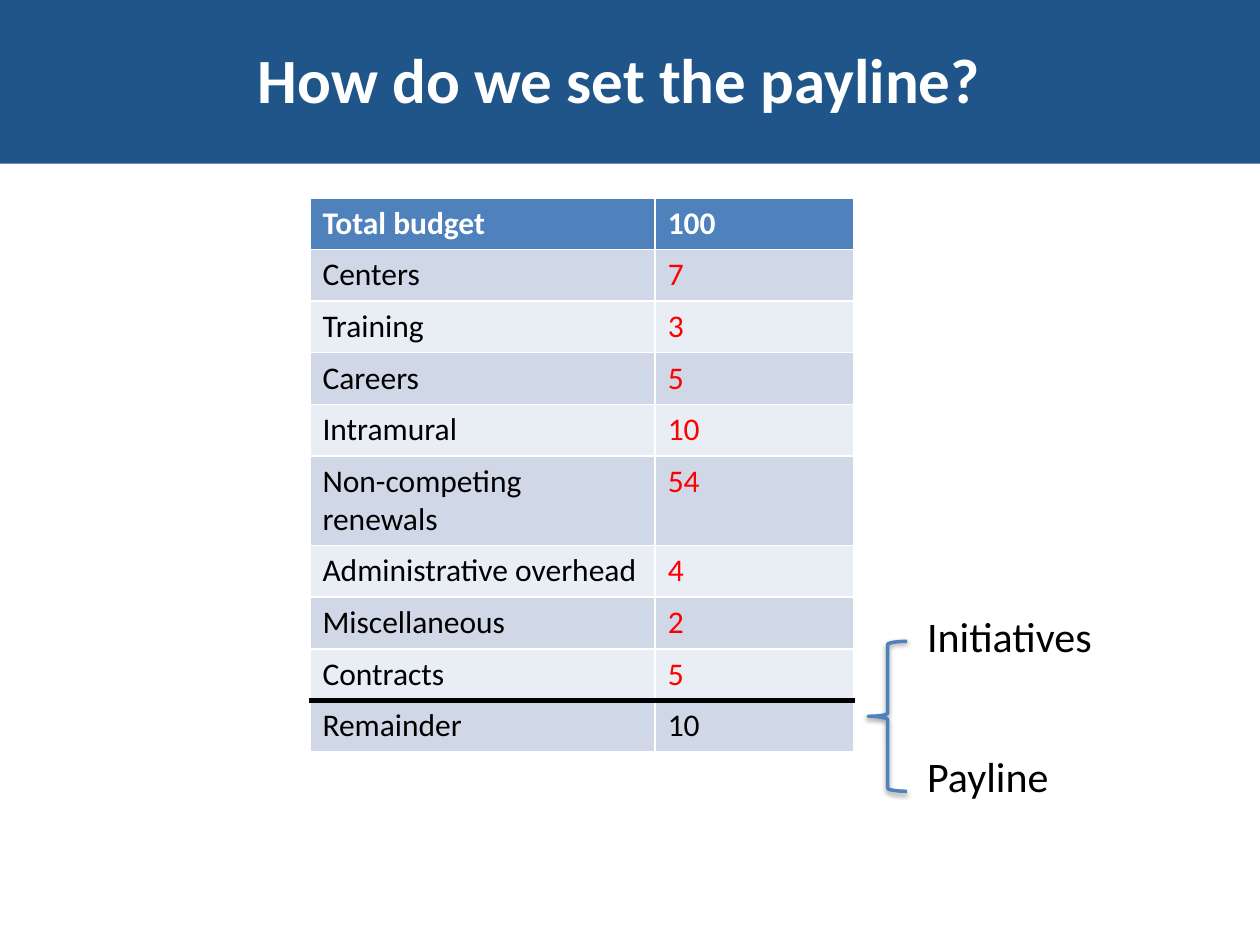
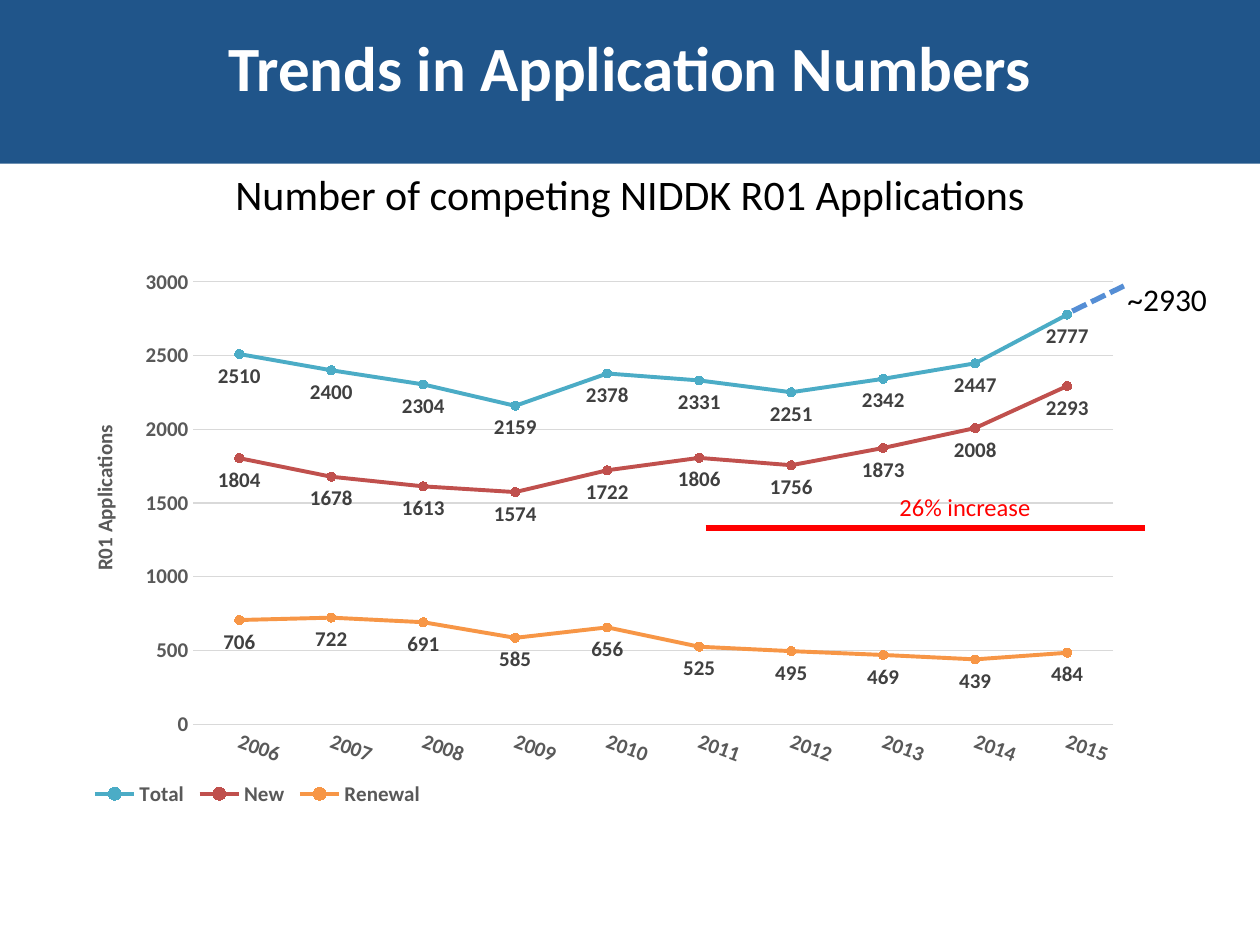
from lxml import etree
from pptx import Presentation
from pptx import util as u
from pptx.chart.data import CategoryChartData
from pptx.dml.color import RGBColor
from pptx.enum import chart as charts, dml, shapes, text
from pptx.oxml import parse_xml
from pptx.oxml.ns import nsdecls, qn

FONT = "Calibri"
COLORS = {
    "band": "20558A", "white": "FFFFFF", "black": "000000", "red": "FF0000",
    "blue": "4F81BD", "odd_row": "D0D8E8", "even_row": "E9EDF4",
    "projection": "558ED5", "total": "4BACC6", "new": "C0504D",
    "renewal": "F79646", "axis": "595959", "label": "404040", "grid": "D9D9D9",
}
RGB = {name: RGBColor.from_string(value) for name, value in COLORS.items()}


def style_font(font, size, color, bold=False):
    font.name = FONT
    font.size = u.Pt(size)
    font.bold = bold
    font.color.rgb = RGB[color]


def add_line(slide, start, end, color):
    points = [u.Inches(value) for value in start + end]
    line = slide.shapes.add_connector(shapes.MSO_CONNECTOR.STRAIGHT, *points)
    line.line.color.rgb = RGB[color]
    line.line.width = u.Pt(3)
    etree.SubElement(line.element.spPr, qn("a:effectLst"))
    return line


presentation = Presentation()
presentation.slide_width = u.Inches(10)
presentation.slide_height = u.Inches(7.5)
layout = presentation.slide_layouts[5]

slides = []
for title_text, left, top in [
    ("How do we set the payline? ", 0.47, 0),
    ("Trends in Application Numbers", 0.5, -0.1),
]:
    slide = presentation.slides.add_slide(layout)
    title = slide.shapes.title
    title.left, title.top = u.Inches(left), u.Inches(top)
    title.width, title.height = u.Inches(9), u.Inches(1.25)
    title.text_frame.text = title_text
    title.text_frame.vertical_anchor = text.MSO_ANCHOR.MIDDLE
    paragraph = title.text_frame.paragraphs[0]
    paragraph.alignment = text.PP_ALIGN.CENTER
    style_font(paragraph.font, 36, "white", True)
    slides.append(slide)
payline_slide, trends_slide = slides

band = payline_slide.shapes.add_shape(
    shapes.MSO_SHAPE.RECTANGLE, 0, 0, u.Inches(10), u.Inches(1.3))
band.fill.solid()
band.fill.fore_color.rgb = RGB["band"]
band.line.fill.background()
band.shadow.inherit = False
layout.shapes.element.insert(2, band.element)

budget = [
    ("Total budget", "100"), ("Centers", "7"), ("Training", "3"),
    ("Careers", "5"), ("Intramural", "10"), ("Non-competing renewals", "54"),
    ("Administrative overhead", "4"), ("Miscellaneous", "2"),
    ("Contracts", "5"), ("Remainder", "10"),
]
last_row = len(budget) - 1
table = payline_slide.shapes.add_table(
    len(budget), 2, u.Inches(2.46), u.Inches(1.57),
    u.Inches(4.32), u.Inches(0.41 * len(budget))).table
table.columns[0].width = u.Inches(2.74)
table.columns[1].width = u.Inches(1.58)
rule_edges = {last_row - 1: "lnB", last_row: "lnT"}
for row, values in enumerate(budget):
    for column, value in enumerate(values):
        cell = table.cell(row, column)
        cell.text = value
        cell.fill.solid()
        fill = "blue" if row == 0 else "odd_row" if row % 2 else "even_row"
        cell.fill.fore_color.rgb = RGB[fill]
        color = "white" if row == 0 else "black"
        if column == 1 and 0 < row < last_row:
            color = "red"
        style_font(cell.text_frame.paragraphs[0].font, 18, color, row == 0)
        if row in rule_edges:
            edge = rule_edges[row]
            cell._tc.get_or_add_tcPr().insert(0, parse_xml(
                f'<a:{edge} {nsdecls("a")} w="{u.Pt(3)}"><a:solidFill>'
                f'<a:srgbClr val="{COLORS["black"]}"/></a:solidFill></a:{edge}>'))

brace = payline_slide.shapes.add_shape(
    shapes.MSO_SHAPE.LEFT_BRACE, u.Inches(6.89), u.Inches(5.09),
    u.Inches(0.31), u.Inches(1.19))
brace.fill.background()
brace.line.color.rgb = RGB["blue"]
brace.line.width = u.Pt(2)
brace.shadow.inherit = False
brace.element.spPr.find(qn("a:effectLst")).append(parse_xml(
    f'<a:outerShdw {nsdecls("a")} blurRad="{u.Pt(3.1)}" dist="{u.Pt(1.6)}" '
    f'dir="5400000" rotWithShape="0"><a:srgbClr val="{COLORS["black"]}">'
    '<a:alpha val="38000"/></a:srgbClr></a:outerShdw>'))

applications = {
    "Total": [2510, 2400, 2304, 2159, 2378, 2331, 2251, 2342, 2447, 2777],
    "New": [1804, 1678, 1613, 1574, 1722, 1806, 1756, 1873, 2008, 2293],
    "Renewal": [706, 722, 691, 585, 656, 525, 495, 469, 439, 484],
}
chart_data = CategoryChartData()
chart_data.categories = [str(year) for year in range(2006, 2016)]
for name, values in applications.items():
    chart_data.add_series(name, values)
chart = trends_slide.shapes.add_chart(
    charts.XL_CHART_TYPE.LINE_MARKERS, u.Inches(0.6), u.Inches(1.66),
    u.Inches(8.49), u.Inches(4.81), chart_data).chart
chart.has_title = False
style_font(chart.font, 12, "black", True)
chart.plots[0].vary_by_categories = False

for series in chart.plots[0].series:
    color = RGB[series.name.lower()]
    series.smooth = False
    series.format.line.color.rgb = color
    series.format.line.width = u.Pt(2.25)
    series.marker.style = charts.XL_MARKER_STYLE.CIRCLE
    series.marker.size = 5
    series.marker.format.fill.solid()
    series.marker.format.fill.fore_color.rgb = color
    series.marker.format.line.color.rgb = color
    labels = series.data_labels
    labels.show_value = True
    labels.position = charts.XL_LABEL_POSITION.BELOW
    style_font(labels.font, 12, "label", True)

category_axis, value_axis = chart.category_axis, chart.value_axis
for axis in (category_axis, value_axis):
    axis.major_tick_mark = charts.XL_TICK_MARK.NONE
    axis.minor_tick_mark = charts.XL_TICK_MARK.NONE
    style_font(axis.tick_labels.font, 12, "axis", True)
for line_format in (category_axis.format, value_axis.major_gridlines.format):
    line_format.line.color.rgb = RGB["grid"]
    line_format.line.width = u.Pt(0.75)
chart.element.xpath("//c:catAx/c:txPr/a:bodyPr")[0].set("rot", "1200000")
value_axis.format.line.fill.background()
value_axis.minimum_scale = 0
value_axis.maximum_scale = 3000
value_axis.major_unit = 500
axis_title = value_axis.axis_title.text_frame
axis_title.text = "R01 Applications"
style_font(axis_title.paragraphs[0].font, 12, "axis", True)

chart.has_legend = True
chart.legend.position = charts.XL_LEGEND_POSITION.BOTTOM
chart.legend.include_in_layout = False
style_font(chart.legend.font, 12, "axis", True)

for query, index, places in [
    ("//c:plotArea", 0, {"x": 0.11, "y": 0.12, "w": 0.86, "h": 0.73}),
    ("//c:legend", 1, {"x": 0.01, "y": 0.94, "w": 0.32, "h": 0.05}),
    ("//c:valAx/c:title", 1, {"x": 0.01, "y": 0.35}),
]:
    part = chart.element.xpath(query)[0]
    for old_layout in part.findall(qn("c:layout")):
        part.remove(old_layout)
    target = '<c:layoutTarget val="inner"/>' if query == "//c:plotArea" else ""
    modes = "".join(f'<c:{key}Mode val="edge"/>' for key in "xy")
    sizes = "".join(f'<c:{key} val="{value}"/>' for key, value in places.items())
    part.insert(index, parse_xml(
        f'<c:layout {nsdecls("c")}><c:manualLayout>{target}{modes}{sizes}'
        '</c:manualLayout></c:layout>'))

add_line(trends_slide, (5.6, 4.19), (9.09, 4.19), "red")
projection = add_line(trends_slide, (8.51, 2.47), (8.92, 2.27), "projection")
projection.line.dash_style = dml.MSO_LINE.SQUARE_DOT

for slide, label_text, left, top, width, height, size, color in [
    (payline_slide, "Initiatives", 7.26, 4.8, 1.53, 0.5, 24, "black"),
    (payline_slide, "Payline", 7.26, 5.91, 1.19, 0.5, 24, "black"),
    (trends_slide, "Number of competing NIDDK R01 Applications",
     1.77, 1.29, 6.53, 0.5, 24, "black"),
    (trends_slide, "26% increase", 7.04, 3.86, 1.25, 0.34, 14, "red"),
    (trends_slide, "~2930", 8.85, 2.17, 0.84, 0.4, 18, "black"),
]:
    box = slide.shapes.add_textbox(
        u.Inches(left), u.Inches(top), u.Inches(width), u.Inches(height))
    box.text_frame.text = label_text
    box.text_frame.word_wrap = False
    box.text_frame.auto_size = text.MSO_AUTO_SIZE.SHAPE_TO_FIT_TEXT
    style_font(box.text_frame.paragraphs[0].font, size, color)

presentation.save("out.pptx")
